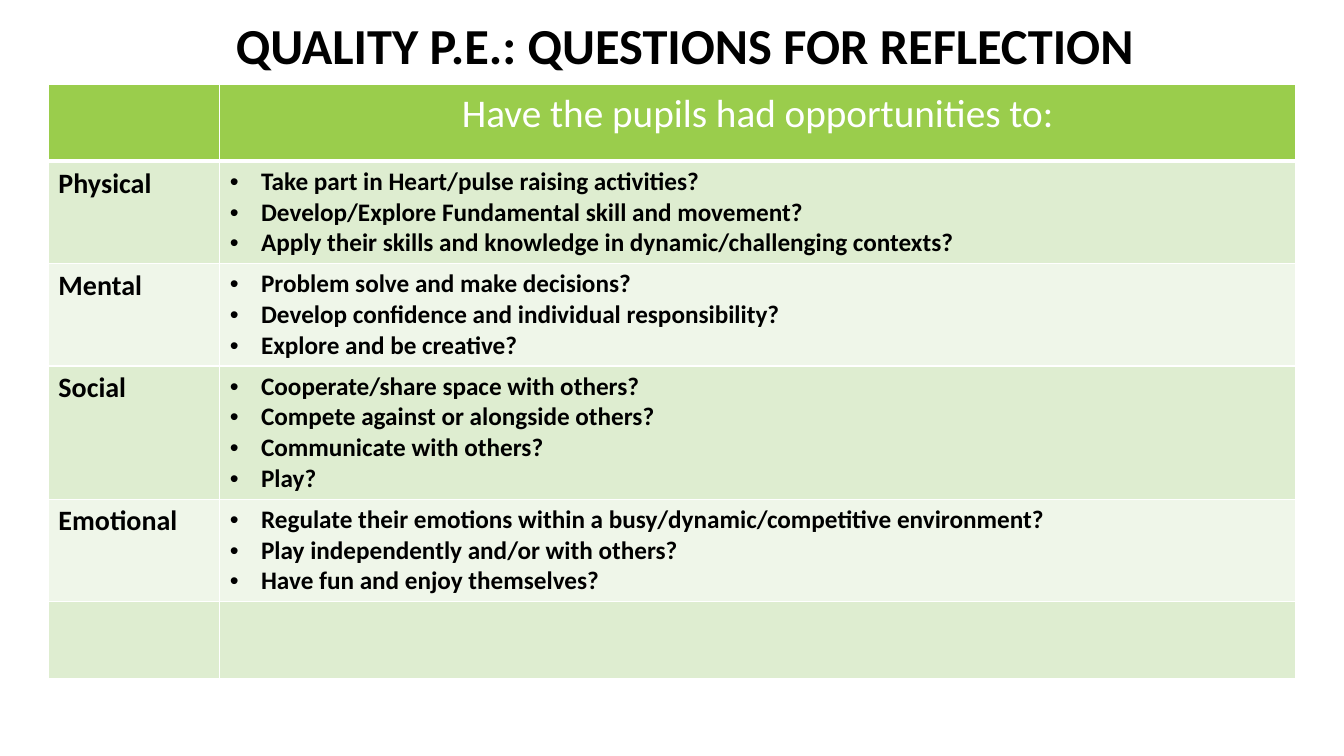
"""Builds the slide of reflection questions on quality physical education."""
from dataclasses import dataclass

from lxml.etree import SubElement
from pptx import Presentation
from pptx.dml.color import RGBColor
from pptx.enum.text import MSO_ANCHOR, MSO_AUTO_SIZE, PP_ALIGN
from pptx.oxml import parse_xml
from pptx.oxml.ns import nsdecls, qn
from pptx.util import Inches, Pt

TITLE = "QUALITY P.E.: QUESTIONS FOR REFLECTION"
PROMPT = "Have the pupils had opportunities to:"
QUESTIONS = {
    "Physical": [
        "Take part in Heart/pulse raising activities?",
        "Develop/Explore Fundamental skill and movement?",
        "Apply their skills and knowledge in dynamic/challenging contexts?",
    ],
    "Mental": [
        "Problem solve and make decisions?",
        "Develop confidence and individual responsibility?",
        "Explore and be creative?",
    ],
    "Social": [
        "Cooperate/share space with others?",
        "Compete against or alongside others?",
        "Communicate with others?",
        "Play?",
    ],
    "Emotional": [
        "Regulate their emotions within a busy/dynamic/competitive environment?",
        "Play independently and/or with others?",
        "Have fun and enjoy themselves?",
    ],
}


@dataclass(frozen=True)
class Theme:
    font: str = "Calibri"
    ink: str = "000000"
    paper: str = "FFFFFF"
    header: str = "9ACD4C"
    bands: tuple = ("DEEDD0", "EFF6E9")
    title_size: int = 36
    prompt_size: int = 28
    area_size: int = 20
    question_size: int = 18
    rule: int = 1
    header_rule: int = 3


THEME = Theme()
SLIDE_SIZE = (13.33, 7.5)
TITLE_BOX = (1.38, -0.33, 10.83, 1.62)
TABLE_LEFT, TABLE_TOP = 0.48, 0.84
COLUMNS = (1.7, 10.67)
PLAIN_ROW = 0.76
LINE_HEIGHT = 0.305
CELL_PADDING = 0.1
BULLET_INDENT = 0.31


def style(paragraph, size, color, bold):
    for run in paragraph.runs:
        run.font.name = THEME.font
        run.font.size = Pt(size)
        run.font.bold = bold
        run.font.color.rgb = RGBColor.from_string(color)


def write(cell, text, size, color=THEME.ink, bold=True):
    cell.text_frame.text = text
    for paragraph in cell.text_frame.paragraphs:
        style(paragraph, size, color, bold)


def add_bullet(paragraph):
    properties = paragraph._p.get_or_add_pPr()
    properties.set("marL", str(Inches(BULLET_INDENT)))
    properties.set("indent", str(-Inches(BULLET_INDENT)))
    SubElement(properties, qn("a:buFont"), typeface="Arial")
    SubElement(properties, qn("a:buChar"), char="•")


def paint(cell, fill, top, bottom):
    cell.fill.solid()
    cell.fill.fore_color.rgb = RGBColor.from_string(fill)
    widths = {"L": THEME.rule, "R": THEME.rule, "T": top, "B": bottom}
    for position, (side, width) in enumerate(widths.items()):
        border = parse_xml(
            f'<a:ln{side} {nsdecls("a")} w="{Pt(width)}"><a:solidFill>'
            f'<a:srgbClr val="{THEME.paper}"/></a:solidFill></a:ln{side}>'
        )
        cell._tc.get_or_add_tcPr().insert(position, border)


def add_title(slide):
    title = slide.shapes.title
    title.left, title.top, title.width, title.height = map(Inches, TITLE_BOX)
    frame = title.text_frame
    frame.text = TITLE
    frame.auto_size = MSO_AUTO_SIZE.NONE
    frame.vertical_anchor = MSO_ANCHOR.MIDDLE
    heading = frame.paragraphs[0]
    heading.alignment = PP_ALIGN.CENTER
    heading.line_spacing = 0.9
    style(heading, THEME.title_size, THEME.ink, True)


def add_questions(slide):
    question_rows = [len(q) * LINE_HEIGHT + CELL_PADDING for q in QUESTIONS.values()]
    heights = [PLAIN_ROW, *question_rows, PLAIN_ROW]
    box = (TABLE_LEFT, TABLE_TOP, sum(COLUMNS), sum(heights))
    table = slide.shapes.add_table(
        len(heights), len(COLUMNS), *map(Inches, box)
    ).table
    table.first_row = table.horz_banding = False
    for column, width in zip(table.columns, COLUMNS):
        column.width = Inches(width)

    for index, (row, height) in enumerate(zip(table.rows, heights)):
        row.height = Inches(height)
        fill = THEME.bands[(index - 1) % 2] if index else THEME.header
        top = THEME.header_rule if index == 1 else THEME.rule
        bottom = THEME.rule if index else THEME.header_rule
        for cell in row.cells:
            paint(cell, fill, top, bottom)

    prompt = table.cell(0, 1)
    write(prompt, PROMPT, THEME.prompt_size, THEME.paper, False)
    prompt.text_frame.paragraphs[0].alignment = PP_ALIGN.CENTER
    for index, (area, questions) in enumerate(QUESTIONS.items(), start=1):
        write(table.cell(index, 0), area, THEME.area_size)
        answers = table.cell(index, 1)
        write(answers, "\n".join(questions), THEME.question_size)
        for paragraph in answers.text_frame.paragraphs:
            add_bullet(paragraph)


def main():
    deck = Presentation()
    deck.slide_width, deck.slide_height = map(Inches, SLIDE_SIZE)
    slide = deck.slides.add_slide(deck.slide_layouts.get_by_name("Title Only"))
    add_title(slide)
    add_questions(slide)
    deck.save("out.pptx")


if __name__ == "__main__":
    main()
